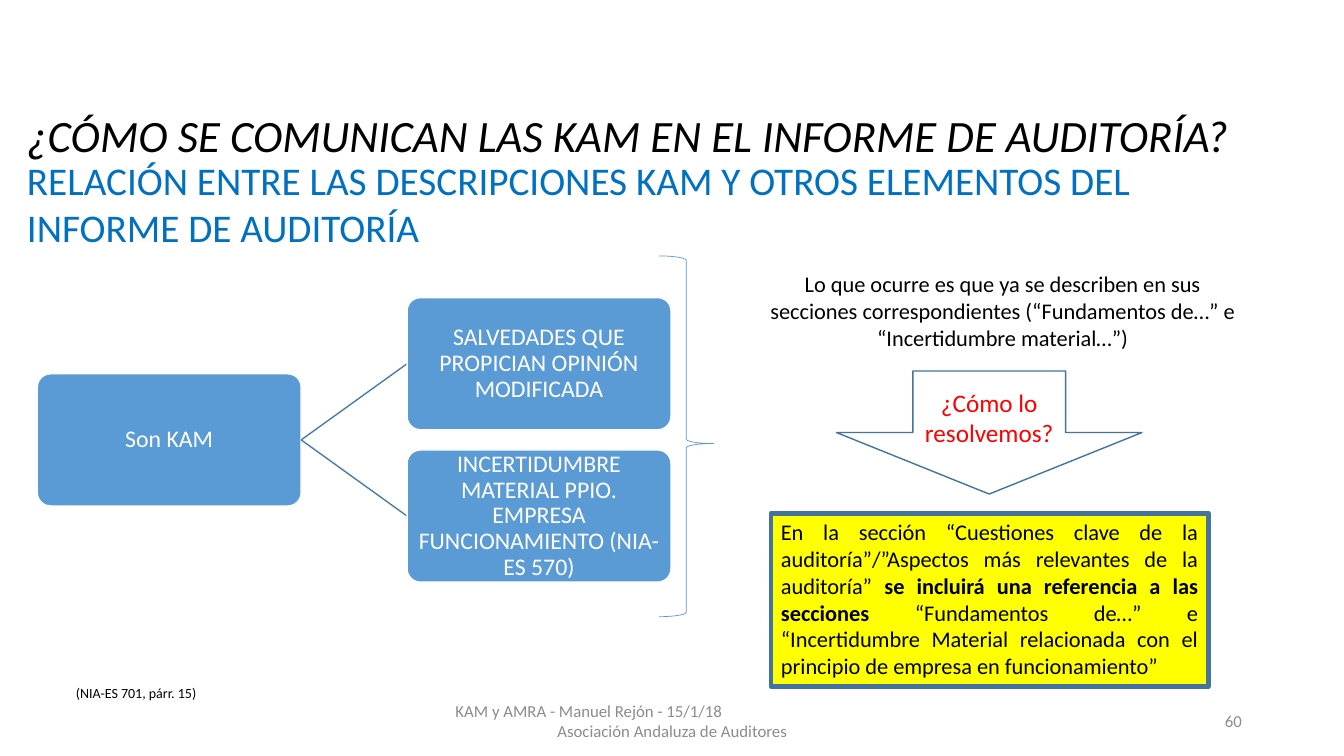
"""Build the slide on how key audit matters relate to other parts of the audit report."""
from lxml.etree import SubElement
from pptx import Presentation
from pptx.dml.color import RGBColor
from pptx.enum.shapes import MSO_CONNECTOR, MSO_SHAPE
from pptx.enum.text import MSO_ANCHOR, PP_ALIGN
from pptx.oxml.ns import qn
from pptx.util import Cm, Pt

BLACK = RGBColor(0x00, 0x00, 0x00)
WHITE = RGBColor(0xFF, 0xFF, 0xFF)
GRAY = RGBColor(0x8C, 0x8C, 0x8C)
RED = RGBColor(0xFF, 0x00, 0x00)
YELLOW = RGBColor(0xFF, 0xFF, 0x00)
TITLE_BLUE = RGBColor(0x00, 0x70, 0xC0)
NODE_BLUE = RGBColor(0x5B, 0x9B, 0xD5)
LINK_BLUE = RGBColor(0x49, 0x7C, 0xAB)
EDGE_BLUE = RGBColor(0x43, 0x73, 0x9E)

prs = Presentation()
prs.slide_width, prs.slide_height = Cm(33.87), Cm(19.05)
s = prs.slides.add_slide(prs.slide_layouts[6])


def write(sp, text, size, color, align=PP_ALIGN.LEFT, anchor=MSO_ANCHOR.TOP):
    tf = sp.text_frame
    tf.word_wrap = True
    tf.vertical_anchor = anchor
    tf.text = text
    for p in tf.paragraphs:
        p.alignment = align
        for r in p.runs:
            r.font.name = "Calibri"
            r.font.size = Pt(size)
            r.font.color.rgb = color
    return tf


def add_outlined(kind, box, fill, line, width):
    sp = s.shapes.add_shape(kind, *map(Cm, box))
    sp.shadow.inherit = False
    if fill is None:
        sp.fill.background()
    else:
        sp.fill.solid()
        sp.fill.fore_color.rgb = fill
    sp.line.color.rgb = line
    sp.line.width = Pt(width)
    return sp


LEFT, CENTER, RIGHT = PP_ALIGN.LEFT, PP_ALIGN.CENTER, PP_ALIGN.RIGHT
TOP, MIDDLE = MSO_ANCHOR.TOP, MSO_ANCHOR.MIDDLE
texts = [
    ((0.43, 2.74, 31.09, 1.65), "¿CÓMO SE COMUNICAN LAS KAM EN EL INFORME DE AUDITORÍA?",
     32, BLACK, LEFT, TOP),
    ((0.43, 3.81, 31.19, 2.64),
     "RELACIÓN ENTRE LAS DESCRIPCIONES KAM Y OTROS ELEMENTOS DEL INFORME DE AUDITORÍA",
     28, TITLE_BLUE, LEFT, TOP),
    ((19.02, 6.68, 12.5, 2.31),
     "Lo que ocurre es que ya se describen en sus secciones correspondientes "
     "(“Fundamentos de…” e “Incertidumbre material…”)", 16, BLACK, CENTER, TOP),
    ((0, 17.12, 6.86, 0.69), "(NIA-ES 701, párr. 15)", 10, BLACK, CENTER, TOP),
    ((11.23, 17.65, 11.43, 1.02),
     "KAM y AMRA - Manuel Rejón - 15/1/18\nAsociación Andaluza de Auditores",
     12, GRAY, CENTER, MIDDLE),
    ((23.93, 17.65, 7.62, 1.02), "60", 12, GRAY, RIGHT, MIDDLE),
]
frames = []
for box, *style in texts:
    frames.append(write(s.shapes.add_textbox(*map(Cm, box)), *style))

title = frames[0].paragraphs[0]
title.line_spacing = 0.9
title.space_before = Pt(10)
title.runs[0].font.italic = True
footer = frames[4]
footer.paragraphs[0].alignment = LEFT

NODE_W, NODE_H = 6.65, 3.33
ROOT_X, ROOT_Y = 0.94, 9.42
CHILD_X = 10.26
nodes = [
    (ROOT_X, ROOT_Y, "Son KAM"),
    (CHILD_X, 7.5, "SALVEDADES QUE PROPICIAN OPINIÓN MODIFICADA"),
    (CHILD_X, 11.34, "INCERTIDUMBRE MATERIAL PPIO. EMPRESA FUNCIONAMIENTO (NIA-ES 570)"),
]
for x, y, text in nodes:
    if x == CHILD_X:
        link = s.shapes.add_connector(
            MSO_CONNECTOR.STRAIGHT, Cm(ROOT_X + NODE_W), Cm(ROOT_Y + NODE_H / 2),
            Cm(x), Cm(y + NODE_H / 2))
        link.line.color.rgb = LINK_BLUE
        link.line.width = Pt(1)
        SubElement(link._element.spPr, qn("a:effectLst"))
    node = add_outlined(MSO_SHAPE.ROUNDED_RECTANGLE, (x, y, NODE_W, NODE_H), NODE_BLUE, WHITE, 1)
    node.adjustments[0] = 0.1
    tf = write(node, text, 17, WHITE, CENTER, MIDDLE)
    tf.margin_left = tf.margin_right = tf.margin_top = tf.margin_bottom = Cm(0.03)
    tf.paragraphs[0].line_spacing = 0.9

brace = add_outlined(MSO_SHAPE.RIGHT_BRACE, (16.61, 6.45, 1.37, 9.09), None, NODE_BLUE, 0.5)
brace.adjustments[0] = 0.08
brace.adjustments[1] = 0.52

arrow = add_outlined(MSO_SHAPE.DOWN_ARROW, (21.08, 9.35, 7.7, 3.1), WHITE, EDGE_BLUE, 1)
write(arrow, "¿Cómo lo resolvemos?", 18, RED, CENTER, MIDDLE)

answer = add_outlined(MSO_SHAPE.RECTANGLE, (19.43, 12.93, 11.02, 4.37), YELLOW, EDGE_BLUE, 3.5)
answer_parts = [
    "En la sección “Cuestiones clave de la auditoría”/”Aspectos más relevantes de la auditoría” ",
    "se incluirá una referencia a las secciones",
    " “Fundamentos de…” e “Incertidumbre Material relacionada con el principio de empresa "
    "en funcionamiento”",
]
p = answer.text_frame.paragraphs[0]
p.alignment = PP_ALIGN.JUSTIFY
answer.text_frame.word_wrap = True
answer.text_frame.vertical_anchor = TOP
for i, part in enumerate(answer_parts):
    r = p.add_run()
    r.text = part
    r.font.name = "Calibri"
    r.font.size = Pt(16)
    r.font.color.rgb = BLACK
    r.font.bold = i == 1

prs.save("out.pptx")
